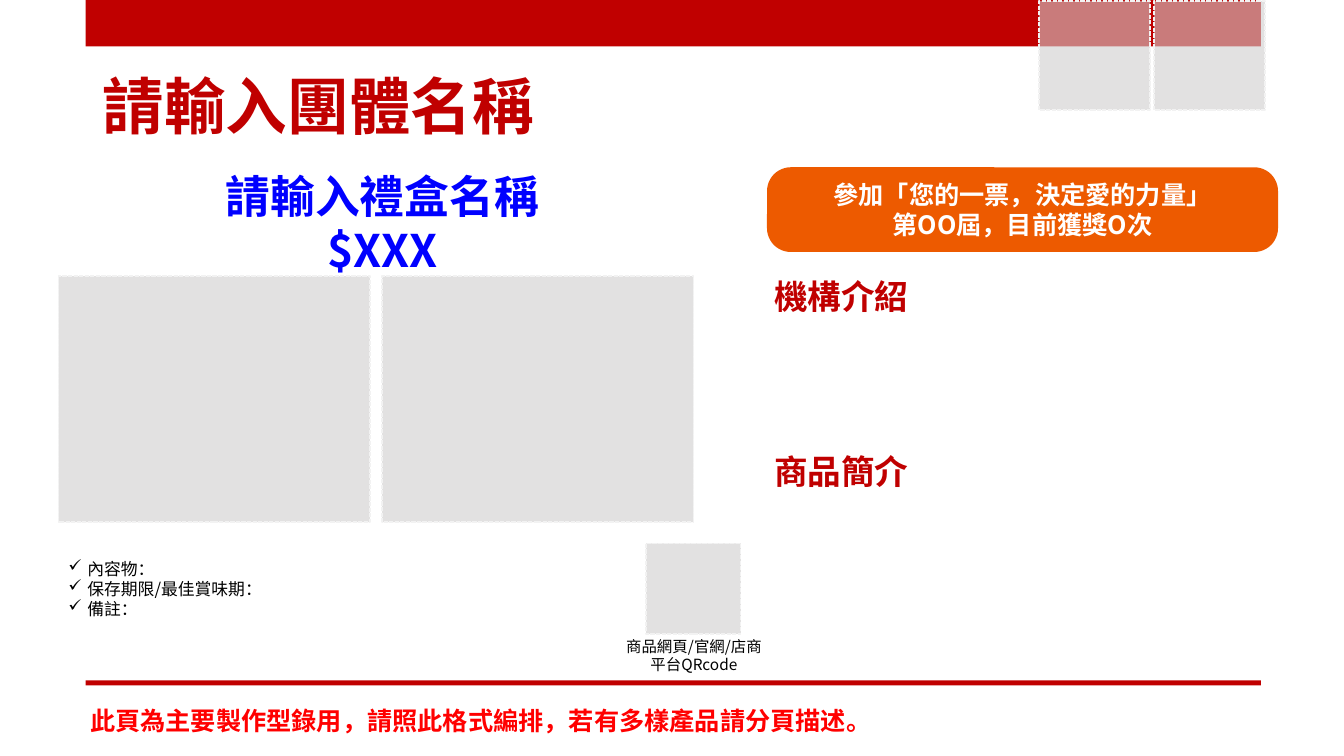
from pptx import Presentation
from pptx.dml.color import RGBColor
from pptx.enum import dml, shapes, text
from pptx.oxml import ns, xmlchemy
from pptx.util import Pt

FONT = "Noto Sans CJK SC"
DARK_RED = RGBColor(0xC0, 0x00, 0x00)
RED = RGBColor(0xFF, 0x00, 0x00)
BLUE = RGBColor(0x00, 0x00, 0xFF)
ORANGE = RGBColor(0xED, 0x5A, 0x00)
BLACK = RGBColor(0x00, 0x00, 0x00)
WHITE = RGBColor(0xFF, 0xFF, 0xFF)
GREY = RGBColor(0xD0, 0xCE, 0xCE)
PALE_GREY = RGBColor(0xF2, 0xF2, 0xF2)

LEFT = text.PP_ALIGN.LEFT
CENTER = text.PP_ALIGN.CENTER
TOP = text.MSO_ANCHOR.TOP
MIDDLE = text.MSO_ANCHOR.MIDDLE


def add_child(parent, tag, **attributes):
    child = xmlchemy.OxmlElement(tag)
    for name, value in attributes.items():
        child.set(name, value)
    parent.append(child)
    return child


def write(shape, content, size, color, bold=False, align=LEFT, anchor=TOP,
          bullet=None, first_spacing=None, space_before=0):
    """Fill a shape with one paragraph for each line of content."""
    frame = shape.text_frame
    frame.word_wrap = True
    frame.auto_size = text.MSO_AUTO_SIZE.NONE
    frame.vertical_anchor = anchor
    for index, line in enumerate(content.split("\n")):
        paragraph = frame.add_paragraph() if index else frame.paragraphs[0]
        if bullet:
            properties = paragraph._p.get_or_add_pPr()
            properties.set("marL", str(Pt(13.5)))
            properties.set("indent", str(Pt(-13.5)))
            add_child(properties, "a:buChar", char=bullet)
        paragraph.alignment = align
        if index == 0 and first_spacing:
            paragraph.line_spacing = first_spacing
        if index and space_before:
            paragraph.space_before = Pt(space_before)
        run = paragraph.add_run()
        run.text = line
        run.font.name = FONT
        run.font.size = Pt(size)
        run.font.bold = bold
        run.font.color.rgb = color
        add_child(run._r.get_or_add_rPr(), "a:ea", typeface=FONT)


def add_text(slide, box, content, **style):
    shape = slide.shapes.add_textbox(*map(Pt, box))
    write(shape, content, **style)


def add_block(slide, box, fill, kind=shapes.MSO_SHAPE.RECTANGLE):
    shape = slide.shapes.add_shape(kind, *map(Pt, box))
    shape.shadow.inherit = False
    shape.fill.solid()
    shape.fill.fore_color.rgb = fill
    shape.line.fill.background()
    return shape


def add_photo_area(slide, box):
    """Translucent grey area with a dashed edge."""
    shape = add_block(slide, box, GREY)
    color = shape._element.spPr.find(ns.qn("a:solidFill"))[0]
    add_child(color, "a:alpha", val="60000")
    shape.line.color.rgb = PALE_GREY
    shape.line.width = Pt(1)
    shape.line.dash_style = dml.MSO_LINE.SQUARE_DOT


def main():
    presentation = Presentation()
    presentation.slide_width, presentation.slide_height = Pt(960), Pt(540)
    slide = presentation.slides.add_slide(presentation.slide_layouts[5])

    # Red bands
    add_block(slide, (61.2, 486, 839.5, 3.6), DARK_RED)
    add_block(slide, (61.2, 0, 839.5, 33.1), DARK_RED)

    # Title
    title = slide.shapes.title
    title.left, title.top, title.width, title.height = map(Pt, (66.2, 26, 828, 104.4))
    write(title, "請輸入團體名稱", size=44, color=DARK_RED, bold=True,
          anchor=MIDDLE, first_spacing=0.9)

    # Footer note
    add_text(slide, (30.2, 500.4, 626.4, 28.8),
             "此頁為主要製作型錄用，請照此格式編排，若有多樣產品請分頁描述。",
             size=18, color=RED, bold=True, align=CENTER)

    # Award badge
    badge = add_block(slide, (547.9, 119.5, 365, 60.5), ORANGE,
                      shapes.MSO_SHAPE.ROUNDED_RECTANGLE)
    badge.adjustments[0] = 0.28
    write(badge, "參加「您的一票，決定愛的力量」\n第OO屆，目前獲獎O次",
          size=18, color=WHITE, bold=True, align=CENTER, anchor=MIDDLE)

    # Introductions
    introduction = add_block(slide, (545.8, 193.7, 367.2, 230.4), WHITE)
    write(introduction, "機構介紹\n商品簡介", size=24, color=DARK_RED, bold=True,
          space_before=96)

    # Gift box name and details
    add_text(slide, (41.8, 395.3, 380.2, 51.1),
             "內容物：\n保存期限/最佳賞味期：\n備註：",
             size=12, color=BLACK, bullet="✓")
    add_text(slide, (66.2, 97.9, 414, 104.4), "請輸入禮盒名稱\n$XXX",
             size=32, color=BLUE, bold=True, align=CENTER, first_spacing=1.5)

    # Product photos, web code and logo areas
    for column in range(2):
        add_photo_area(slide, (41.8 + column * 231.1, 197.3, 222.5, 175.7))
        add_photo_area(slide, (742.3 + column * 82.1, 0.7, 79.2, 77.8))
    add_photo_area(slide, (461.5, 388.1, 67.7, 64.8))
    add_text(slide, (439.9, 451.4, 111.6, 33.8), "商品網頁/官網/店商平台QRcode",
             size=11, color=BLACK, align=CENTER)

    presentation.save("out.pptx")


if __name__ == "__main__":
    main()
